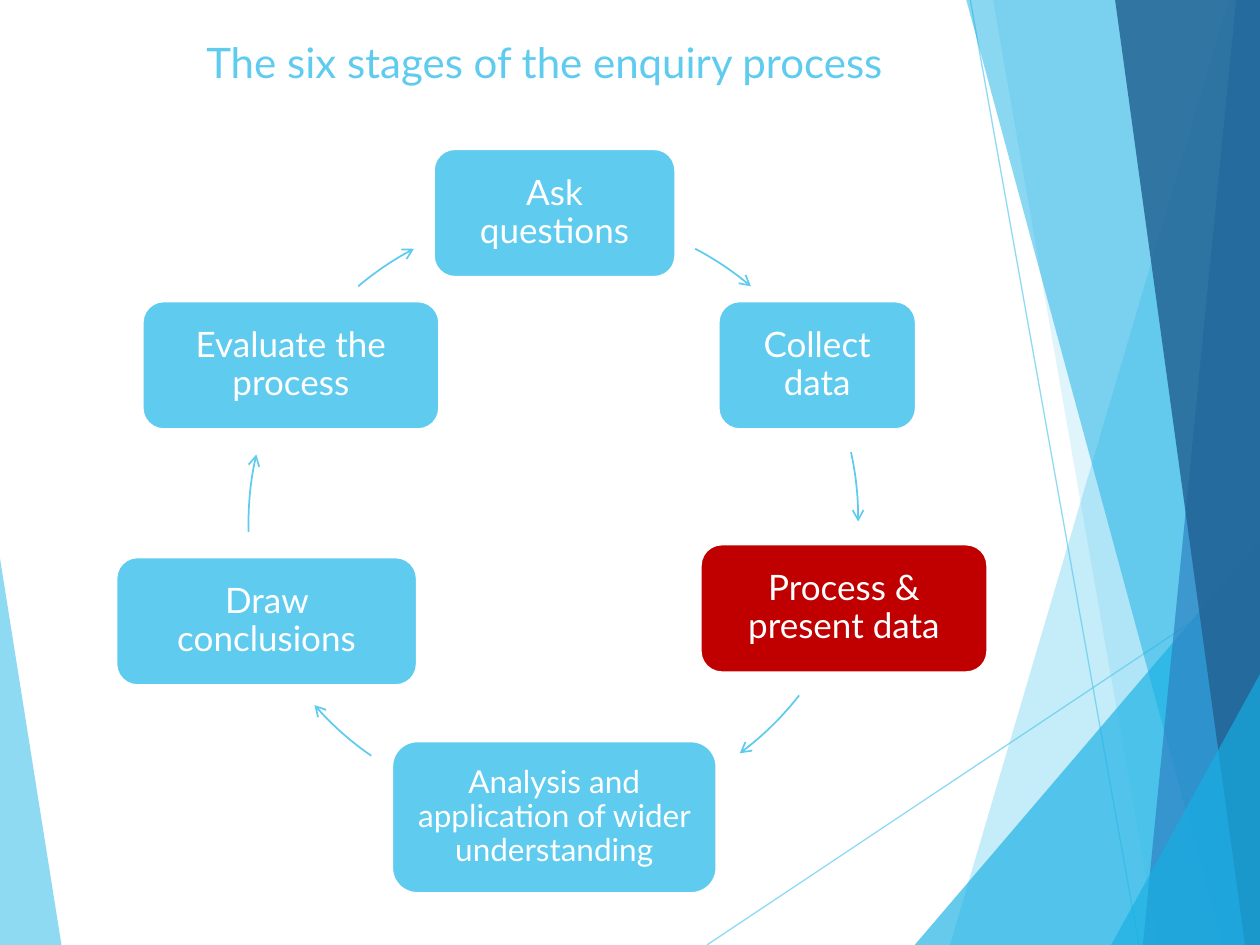
from math import cos, radians, sin

from lxml import etree
from pptx import Presentation
from pptx.dml.color import RGBColor
from pptx.enum.shapes import MSO_CONNECTOR, MSO_SHAPE
from pptx.enum.text import MSO_ANCHOR, PP_ALIGN
from pptx.oxml.ns import qn
from pptx.util import Cm, Pt

ROUNDED = MSO_SHAPE.ROUNDED_RECTANGLE
STRAIGHT = MSO_CONNECTOR.STRAIGHT
TOP, MIDDLE = MSO_ANCHOR.TOP, MSO_ANCHOR.MIDDLE
LEFT, CENTER = PP_ALIGN.LEFT, PP_ALIGN.CENTER

# All lengths are in centimetres
W, H = 25.4, 19.05
FONT = "Lato"
SKY, CYAN, BLUE, NAVY = "5FCBEF", "17B0E4", "2E83C3", "226292"
RED, WHITE = "C00000", "FFFFFF"

TITLE = "The six stages of the enquiry process"
TITLE_BOX = (3.91, 0.61, 17.63, 3.66)

LEFT_WEDGE = ([(0, 11.25), (1.24, H), (0, H)], SKY, 70)
THIN_LINES = [((14.25, H), (W, 11.62)), ((19.56, 0), (22.96, H))]
# Start and end of the slanting left edge, colour, opacity in percent;
# each facet fills everything to the right of its edge
FACETS = [
    ((24.77, 0), (19.15, H), SKY, 36),
    ((20.02, 0), (23.34, H), SKY, 20),
    ((W, 10.9), (18.44, H), CYAN, 66),
    ((19.48, 0), (24.64, H), CYAN, 50),
    ((24.92, 0), (23.04, H), BLUE, 70),
    ((22.48, 0), (25.1, H), NAVY, 82),
    ((W, 13.59), (22.4, H), CYAN, 66),
]

# Text, (left, top, width, height), colour, text size
STAGES = [
    ("Ask questions", (8.74, 3, 4.88, 2.59), SKY, 20),
    ("Collect data", (14.48, 6.07, 3.99, 2.59), SKY, 20),
    ("Process & present data", (14.12, 10.97, 5.79, 2.59), RED, 20),
    ("Analysis and application of wider understanding",
     (7.9, 14.94, 6.55, 3.07), SKY, 18),
    ("Draw conclusions", (2.34, 11.23, 6.07, 2.59), SKY, 20),
    ("Evaluate the process", (2.87, 6.07, 5.99, 2.59), SKY, 20),
]

# Circle centre, start and end angle in degrees, clockwise from the right
RADIUS, STEPS = 6.12, 12
ARROWS = [
    ((11.18, 10.44), -62.4, -49.7),
    ((11.18, 10.44), -12.5, 0.7),
    ((11.28, 10.26), 37.9, 53.6),
    ((10.95, 10.19), 124.5, 138.9),
    ((11.13, 10.54), 178.3, 193),
    ((11.18, 10.44), 229.7, 242.4),
]


def rgb(color):
    return RGBColor.from_string(color)


def set_alpha(fill, color, percent):
    """Give a solid colour to a fill and make it partly transparent."""
    fill.solid()
    fill.fore_color.rgb = rgb(color)
    parent = fill._xPr
    clr = parent.find(".//" + qn("a:srgbClr"))
    etree.SubElement(clr, qn("a:alpha"), val=str(percent * 1000))


def add_path(s, points, close):
    builder = s.shapes.build_freeform(*map(Cm, points[0]))
    builder.add_line_segments(
        [(Cm(x), Cm(y)) for x, y in points[1:]], close=close)
    sp = builder.convert_to_shape()
    sp.shadow.inherit = False
    return sp


def add_facet(s, points, color, opacity):
    sp = add_path(s, points, True)
    set_alpha(sp.fill, color, opacity)
    sp.line.fill.background()


def add_thin_line(s, start, end):
    line = s.shapes.add_connector(STRAIGHT, *map(Cm, start + end))
    line.line.width = Pt(0.75)
    set_alpha(line.line.fill, SKY, 70)
    etree.SubElement(line._element.spPr, qn("a:effectLst"))


def add_arrow(s, center, start, end):
    cx, cy = center
    angles = [radians(start + (end - start) * i / STEPS)
              for i in range(STEPS + 1)]
    points = [(cx + RADIUS * cos(a), cy + RADIUS * sin(a)) for a in angles]
    sp = add_path(s, points, False)
    sp.fill.background()
    sp.line.color.rgb = rgb(SKY)
    sp.line.width = Pt(1)
    etree.SubElement(sp.line._get_or_add_ln(), qn("a:tailEnd"), type="arrow")


def write(sp, text, size, color, frame_format, paragraph_format):
    tf = sp.text_frame
    p = tf.paragraphs[0]
    r = p.add_run()
    r.text = text
    r.font.color.rgb = rgb(color)
    font_format = {"name": FONT, "size": Pt(size)}
    for target, values in ((tf, frame_format), (p, paragraph_format),
                           (r.font, font_format)):
        for name, value in values.items():
            setattr(target, name, value)


def add_stage(s, text, box, color, size):
    sp = s.shapes.add_shape(ROUNDED, *map(Cm, box))
    sp.shadow.inherit = False
    sp.fill.solid()
    sp.fill.fore_color.rgb = rgb(color)
    sp.line.color.rgb = rgb(WHITE)
    sp.line.width = Pt(1.5)
    frame = {"word_wrap": True, "vertical_anchor": MIDDLE}
    for side in ("left", "top", "right", "bottom"):
        frame["margin_" + side] = Cm(0.2)
    write(sp, text, size, WHITE, frame,
          {"alignment": CENTER, "line_spacing": 0.9})


def main():
    prs = Presentation()
    prs.slide_width, prs.slide_height = Cm(W), Cm(H)
    s = prs.slides.add_slide(prs.slide_layouts[6])

    add_facet(s, *LEFT_WEDGE)
    for start, end in THIN_LINES:
        add_thin_line(s, start, end)
    for start, end, color, opacity in FACETS:
        add_facet(s, [start, end, (W, H), (W, start[1])], color, opacity)

    for stage, arrow in zip(STAGES, ARROWS):
        add_stage(s, *stage)
        add_arrow(s, *arrow)

    title = s.shapes.add_textbox(*map(Cm, TITLE_BOX))
    write(title, TITLE, 24, SKY,
          {"word_wrap": True, "vertical_anchor": TOP}, {"alignment": LEFT})
    prs.save("out.pptx")


if __name__ == "__main__":
    main()
